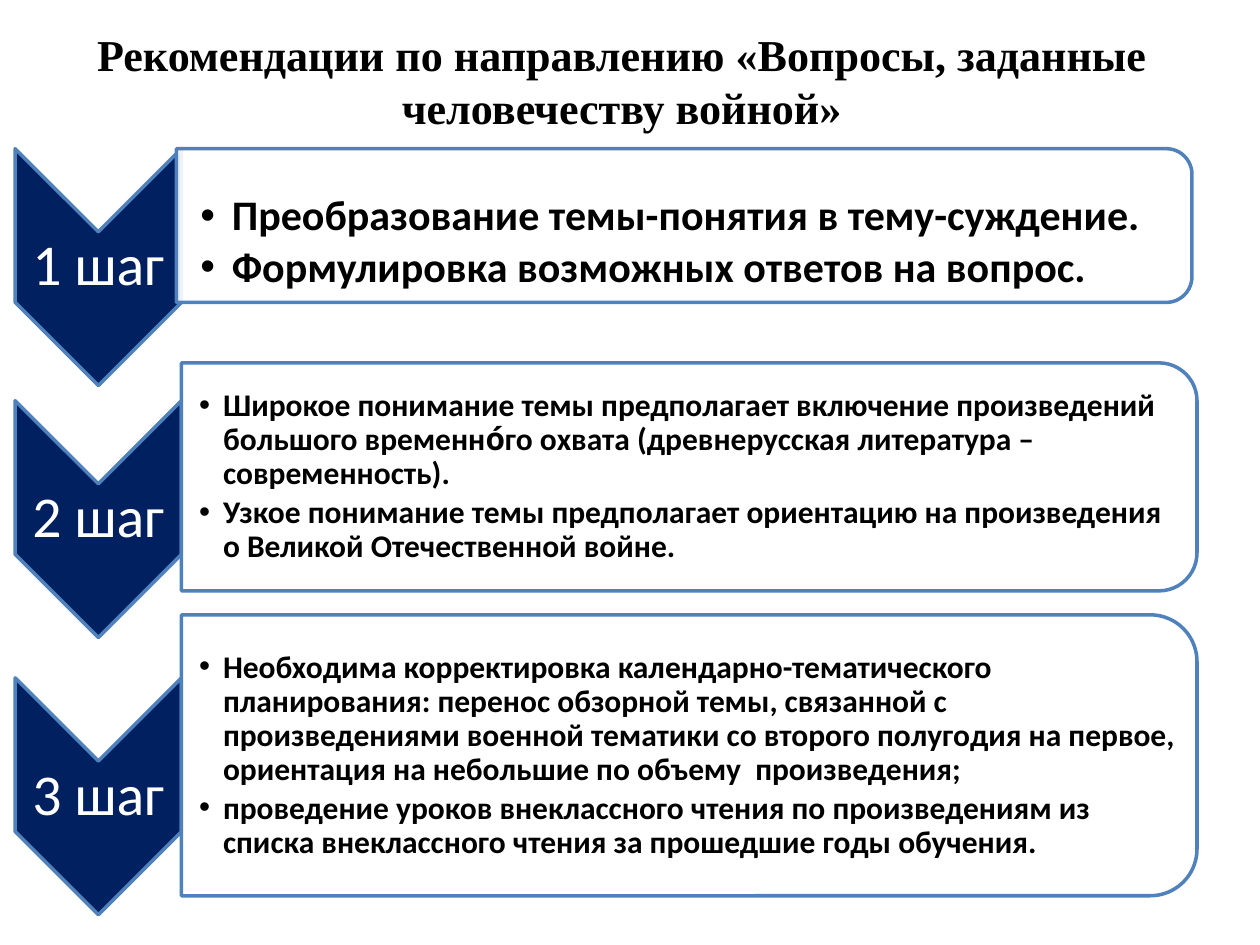
from lxml.etree import SubElement
from pptx import Presentation
from pptx.dml.color import RGBColor
from pptx.enum.shapes import MSO_SHAPE
from pptx.enum.text import MSO_ANCHOR, PP_ALIGN
from pptx.oxml.ns import qn
from pptx.util import Inches, Pt

NAVY = RGBColor(0x00, 0x20, 0x60)
BLUE = RGBColor(0x4F, 0x81, 0xBD)
WHITE = RGBColor(0xFF, 0xFF, 0xFF)
BLACK = RGBColor(0x00, 0x00, 0x00)

# Content
TITLE = "Рекомендации по направлению «Вопросы, заданные человечеству войной»"
# Lengths in inches; panel is left, top, height; text box is left, top, width, height
STEPS = [
    dict(label="1 шаг", chevron_top=1.18, panel=(1.4, 1.18, 1.22),
         text_box=(1.4, 1.24, 8.01, 1.1), insets=(0.19, 0.3, 0.02, 0.02),
         size=24, indent=0.25,
         items=["Преобразование темы-понятия в тему-суждение.",
                "Формулировка возможных ответов на вопрос."]),
    dict(label="2 шаг", chevron_top=3.18, panel=(1.44, 2.88, 1.81),
         text_box=(1.44, 2.97, 7.98, 1.63), insets=(0.14, 0.01, 0.01, 0.01),
         size=18, indent=0.19,
         items=["Широкое понимание темы предполагает включение произведений большого "
                "временно́го охвата (древнерусская литература – современность).",
                "Узкое понимание темы предполагает ориентацию на произведения "
                "о Великой Отечественной войне."]),
    dict(label="3 шаг", chevron_top=5.38, panel=(1.44, 4.88, 2.23),
         text_box=(1.44, 4.99, 7.96, 2.01), insets=(0.14, 0.01, 0.01, 0.01),
         size=18, indent=0.19,
         items=["Необходима корректировка календарно-тематического планирования: "
                "перенос обзорной темы, связанной с произведениями военной тематики "
                "со второго полугодия на первое, ориентация на небольшие по объему  "
                "произведения;",
                "проведение уроков внеклассного чтения по произведениям из списка "
                "внеклассного чтения за прошедшие годы обучения."]),
]
CHEVRON_LEFT, CHEVRON_WIDTH, CHEVRON_HEIGHT = 0.12, 1.32, 1.88
PANEL_WIDTH = 8.06
LABEL_OFFSET, LABEL_HEIGHT = 0.66, 0.56


def add_turned_shape(slide, kind, left, top, width, height, color):
    """Add a shape turned by 90 degrees that covers the given area."""
    shift = (width - height) / 2
    shape = slide.shapes.add_shape(kind, Inches(left + shift), Inches(top - shift),
                                   Inches(height), Inches(width))
    shape.rotation = 90
    shape.shadow.inherit = False
    shape.fill.solid()
    shape.fill.fore_color.rgb = color
    shape.line.color.rgb = BLUE
    shape.line.width = Pt(2)
    return shape


def set_opacity(shape, percent):
    color = shape.fill._xPr.find(qn("a:solidFill"))[0]
    SubElement(color, qn("a:alpha")).set("val", str(percent * 1000))


def add_text(slide, area, insets, lines, size, color, bold=False):
    box = slide.shapes.add_textbox(*map(Inches, area))
    frame = box.text_frame
    frame.word_wrap = True
    frame.vertical_anchor = MSO_ANCHOR.MIDDLE
    (frame.margin_left, frame.margin_top,
     frame.margin_right, frame.margin_bottom) = map(Inches, insets)
    frame.text = "\n".join(lines)
    for para in frame.paragraphs:
        para.line_spacing = 0.9
        format_runs(para, "Calibri", size, color, bold)
    return frame.paragraphs


def format_runs(para, font_name, size, color, bold):
    for span in para.runs:
        span.font.name = font_name
        span.font.size = Pt(size)
        span.font.color.rgb = color
        span.font.bold = bold


def add_bullet(para, indent):
    properties = para._p.get_or_add_pPr()
    properties.set("marL", str(Inches(indent)))
    properties.set("indent", str(-Inches(indent)))
    SubElement(properties, qn("a:buFont")).set("typeface", "Arial")
    SubElement(properties, qn("a:buChar")).set("char", "•")


def add_step(slide, step):
    # Chevron with its label
    top = step["chevron_top"]
    add_turned_shape(slide, MSO_SHAPE.CHEVRON, CHEVRON_LEFT, top,
                     CHEVRON_WIDTH, CHEVRON_HEIGHT, NAVY)
    area = (CHEVRON_LEFT, top + LABEL_OFFSET, CHEVRON_WIDTH, LABEL_HEIGHT)
    label = add_text(slide, area, [0.02] * 4, [step["label"]], 33, WHITE)[0]
    label.alignment = PP_ALIGN.CENTER

    # Panel with its bullet list
    left, top, height = step["panel"]
    panel = add_turned_shape(slide, MSO_SHAPE.ROUND_2_SAME_RECTANGLE, left, top,
                             PANEL_WIDTH, height, WHITE)
    set_opacity(panel, 90)
    for para in add_text(slide, step["text_box"], step["insets"], step["items"],
                         step["size"], BLACK, bold=True):
        para.space_after = Pt(round(step["size"] * 0.15, 1))
        add_bullet(para, step["indent"])


def main():
    deck = Presentation()
    deck.slide_width, deck.slide_height = Inches(10), Inches(7.5)
    slide = deck.slides.add_slide(deck.slide_layouts[5])

    # Title
    title = slide.shapes.title
    title.left, title.top = Inches(0.12), Inches(0.13)
    title.width, title.height = Inches(9.63), Inches(1.02)
    title.text_frame.text = TITLE
    title.text_frame.vertical_anchor = MSO_ANCHOR.MIDDLE
    heading = title.text_frame.paragraphs[0]
    heading.alignment = PP_ALIGN.CENTER
    format_runs(heading, "Times New Roman", 25.2, BLACK, True)

    # Steps
    for step in STEPS:
        add_step(slide, step)
    deck.save("out.pptx")


if __name__ == "__main__":
    main()
